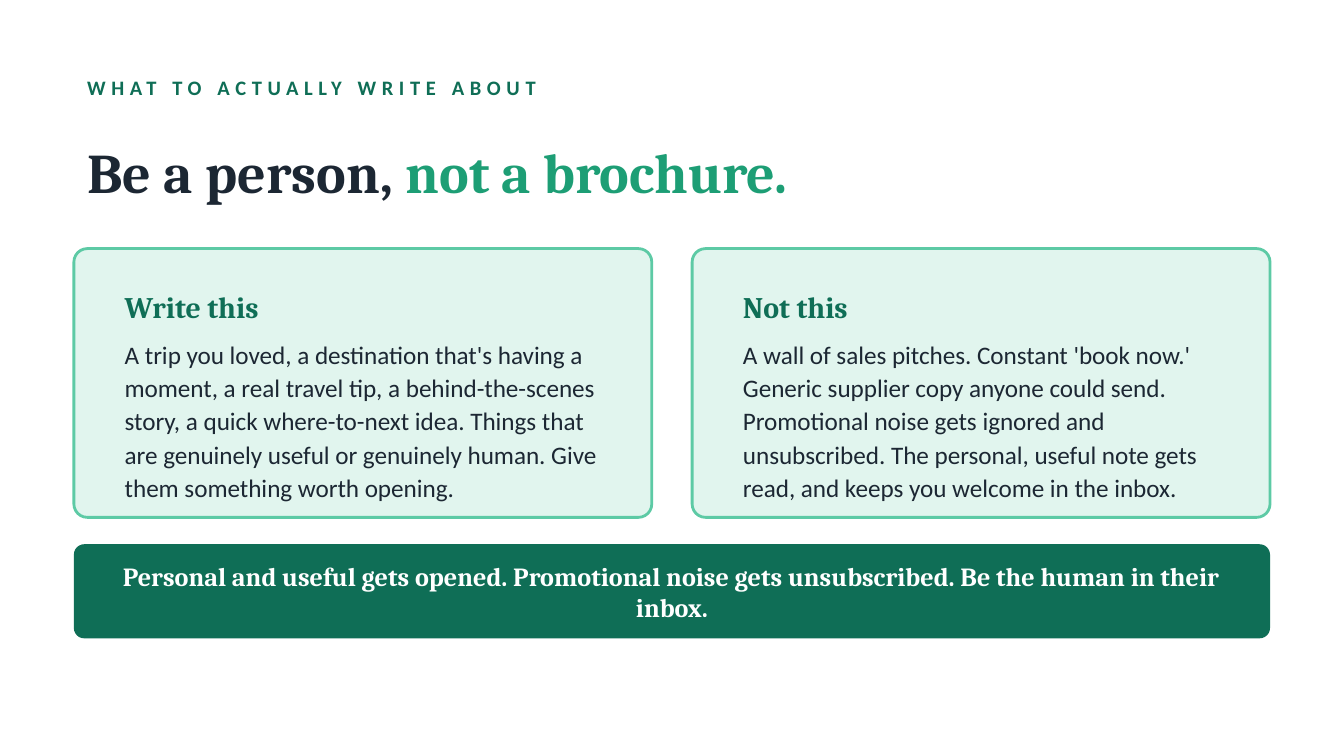
from pptx import Presentation
from pptx.dml.color import RGBColor
from pptx.enum.shapes import MSO_SHAPE
from pptx.enum.text import MSO_ANCHOR, MSO_AUTO_SIZE, PP_ALIGN
from pptx.util import Pt

COLORS = {
    "ink": "1C2733",
    "forest": "0F6E56",
    "green": "1D9E75",
    "mint": "5DCAA5",
    "pale": "E1F5EE",
    "white": "FFFFFF",
}
HEADING_FONT, BODY_FONT = "Cambria", "Calibri"

EYEBROW = "WHAT TO ACTUALLY WRITE ABOUT"
TITLE = [("Be a person, ", "ink"), ("not a brochure.", "green")]
CARDS = [
    ("Write this",
     "A trip you loved, a destination that's having a moment, a real travel tip, "
     "a behind-the-scenes story, a quick where-to-next idea. Things that are "
     "genuinely useful or genuinely human. Give them something worth opening."),
    ("Not this",
     "A wall of sales pitches. Constant 'book now.' Generic supplier copy anyone "
     "could send. Promotional noise gets ignored and unsubscribed. The personal, "
     "useful note gets read, and keeps you welcome in the inbox."),
]
BANNER = ("Personal and useful gets opened. Promotional noise gets unsubscribed. "
          "Be the human in their inbox.")

PAGE_WIDTH, PAGE_HEIGHT = 720, 405
MARGIN = 39.6
CONTENT_WIDTH = PAGE_WIDTH - 2 * MARGIN
CARD_GAP = 21.6
CARD_WIDTH = (CONTENT_WIDTH - CARD_GAP * (len(CARDS) - 1)) / len(CARDS)
CARD_TOP, CARD_HEIGHT = 133.2, 144
CARD_INDENT, CARD_TEXT_WIDTH = 20.16, 273.6
BANNER_TOP, BANNER_HEIGHT, BANNER_INDENT = 291.6, 50.4, 18


def color(name):
    return RGBColor.from_string(COLORS[name])


def style(span, font, size, ink, bold=True):
    span.font.name = font
    span.font.size = Pt(size)
    span.font.bold = bold
    span.font.color.rgb = color(ink)


def prepare(frame):
    frame.word_wrap = True
    frame.auto_size = MSO_AUTO_SIZE.NONE
    frame.vertical_anchor = MSO_ANCHOR.MIDDLE


def add_text(page, area, text, font, size, ink, bold=True):
    box = page.shapes.add_textbox(*map(Pt, area))
    prepare(box.text_frame)
    para = box.text_frame.paragraphs[0]
    para.text = text
    style(para.runs[0], font, size, ink, bold)
    return para


def add_panel(page, area, corner, fill, outline=None):
    panel = page.shapes.add_shape(MSO_SHAPE.ROUNDED_RECTANGLE, *map(Pt, area))
    panel.adjustments[0] = corner
    panel.shadow.inherit = False
    panel.fill.solid()
    panel.fill.fore_color.rgb = color(fill)
    if outline:
        panel.line.color.rgb = color(outline)
        panel.line.width = Pt(1.5)
    else:
        panel.line.fill.background()


def add_title(page):
    title = page.shapes.title
    title.left, title.top, title.width, title.height = map(
        Pt, (MARGIN, 61.2, CONTENT_WIDTH, 61.2))
    prepare(title.text_frame)
    para = title.text_frame.paragraphs[0]
    para.alignment = PP_ALIGN.LEFT
    for text, ink in TITLE:
        span = para.add_run()
        span.text = text
        style(span, HEADING_FONT, 30, ink)


def add_card(page, left, heading, body):
    add_panel(page, (left, CARD_TOP, CARD_WIDTH, CARD_HEIGHT), 0.05, "pale", "mint")
    text_left = left + CARD_INDENT
    add_text(page, (text_left, CARD_TOP + 12.96, CARD_TEXT_WIDTH, 36),
             heading, HEADING_FONT, 16, "forest")
    para = add_text(page, (text_left, CARD_TOP + 51.84, CARD_TEXT_WIDTH, 79.2),
                    body, BODY_FONT, 13.5, "ink", bold=False)
    para.line_spacing = 1.1


def add_banner(page):
    add_panel(page, (MARGIN, BANNER_TOP, CONTENT_WIDTH, BANNER_HEIGHT), 0.11, "forest")
    para = add_text(page, (MARGIN + BANNER_INDENT, BANNER_TOP,
                           CONTENT_WIDTH - 2 * BANNER_INDENT, BANNER_HEIGHT),
                    BANNER, HEADING_FONT, 14, "white")
    para.alignment = PP_ALIGN.CENTER


def main():
    deck = Presentation()
    deck.slide_width, deck.slide_height = Pt(PAGE_WIDTH), Pt(PAGE_HEIGHT)
    page = deck.slides.add_slide(deck.slide_layouts.get_by_name("Title Only"))
    page.background.fill.solid()
    page.background.fill.fore_color.rgb = color("white")

    eyebrow = add_text(page, (MARGIN, 36, CONTENT_WIDTH, 21.6),
                       EYEBROW, BODY_FONT, 11, "forest")
    eyebrow.runs[0].font._element.set("spc", "300")
    add_title(page)
    for index, (heading, body) in enumerate(CARDS):
        add_card(page, MARGIN + index * (CARD_WIDTH + CARD_GAP), heading, body)
    add_banner(page)
    deck.save("out.pptx")


if __name__ == "__main__":
    main()
